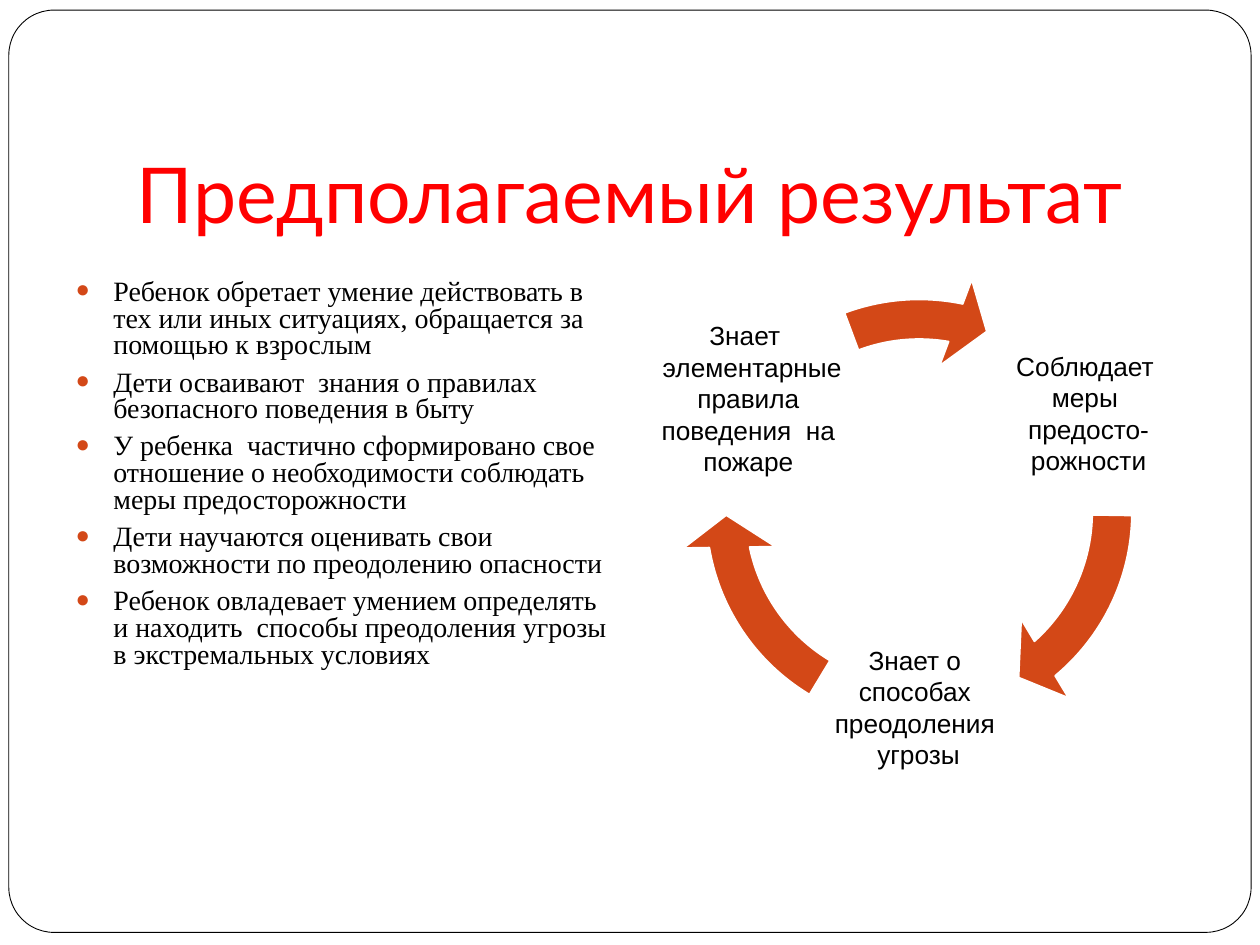
import pptx
import pptx.dml.color
import pptx.enum.shapes
import pptx.enum.text
import pptx.oxml
import pptx.oxml.ns
import pptx.util
from pptx.util import Inches

ALIGN = pptx.enum.text.PP_ALIGN
ANCHOR = pptx.enum.text.MSO_ANCHOR
SHAPE = pptx.enum.shapes.MSO_SHAPE


def color(hex_string):
    return pptx.dml.color.RGBColor.from_string(hex_string)


class SlideBuilder:
    accent = "D34817"
    black = "000000"
    white = "FFFFFF"
    red = "FF0000"

    def __init__(self, presentation):
        self.slide = presentation.slides.add_slide(presentation.slide_layouts[1])

    def place(self, shape, left, top, width, height):
        shape.left, shape.top = Inches(left), Inches(top)
        shape.width, shape.height = Inches(width), Inches(height)

    def format_runs(self, paragraph, font_name, size, font_color):
        for run in paragraph.runs:
            run.font.name = font_name
            run.font.size = pptx.util.Pt(size)
            run.font.color.rgb = color(font_color)

    def set_insets(self, frame, left, top, right, bottom):
        frame.margin_left, frame.margin_top = Inches(left), Inches(top)
        frame.margin_right, frame.margin_bottom = Inches(right), Inches(bottom)

    def shape(self, kind, box, adjustments, fill, line, line_width):
        shape = self.slide.shapes.add_shape(kind, *map(Inches, box))
        for index, value in enumerate(adjustments):
            shape.adjustments[index] = value
        shape.shadow.inherit = False
        shape.fill.solid()
        shape.fill.fore_color.rgb = color(fill)
        shape.line.color.rgb = color(line)
        shape.line.width = pptx.util.Pt(line_width)
        return shape

    def frame(self, box):
        shape = self.shape(SHAPE.ROUNDED_RECTANGLE, box, [0.049],
                           self.white, self.black, 0.5)
        # Send the frame behind the placeholders
        self.slide.shapes._spTree.insert(2, shape._element)

    def title(self, text, box):
        title = self.slide.shapes.title
        self.place(title, *box)
        frame = title.text_frame
        frame.text = text
        frame.auto_size = pptx.enum.text.MSO_AUTO_SIZE.NONE
        frame.vertical_anchor = ANCHOR.BOTTOM
        self.set_insets(frame, 0.1, 0.05, 0.1, 0.1)
        paragraph = frame.paragraphs[0]
        paragraph.alignment = ALIGN.CENTER
        self.format_runs(paragraph, "Lato", 44, self.red)

    def bullets(self, items, box):
        body = self.slide.placeholders[1]
        self.place(body, *box)
        frame = body.text_frame
        frame.text = "\n".join(items)
        frame.auto_size = pptx.enum.text.MSO_AUTO_SIZE.NONE
        for paragraph in frame.paragraphs:
            paragraph.line_spacing = 0.8
            paragraph.space_before = pptx.util.Pt(5.8)
            self.format_runs(paragraph, "Times New Roman", 16, self.black)
            self.bullet(paragraph)

    def bullet(self, paragraph):
        properties = paragraph._p.get_or_add_pPr()
        properties.set("marL", str(Inches(0.3)))
        properties.set("indent", str(-Inches(0.3)))
        namespace = pptx.oxml.ns.nsdecls("a")
        for xml in (
            f'<a:buClr {namespace}><a:srgbClr val="{self.accent}"/></a:buClr>',
            f'<a:buSzPct {namespace} val="85000"/>',
            f'<a:buChar {namespace} char="●"/>',
        ):
            properties.append(pptx.oxml.parse_xml(xml))

    def label(self, lines, left, top, bottom_inset):
        box = self.slide.shapes.add_textbox(
            Inches(left), Inches(top), Inches(1.6), Inches(1.6))
        frame = box.text_frame
        frame.word_wrap = True
        frame.vertical_anchor = ANCHOR.MIDDLE
        self.set_insets(frame, 0.02, 0.02, 0.02, bottom_inset)
        frame.text = "\n".join(lines)
        for paragraph in frame.paragraphs:
            paragraph.alignment = ALIGN.CENTER
            self.format_runs(paragraph, "Arial", 15, self.black)

    def cycle_arrow(self, start, end):
        # Angles are adjusted in units of 100000/60000 degrees
        adjustments = [0.083, 5.766, end * 0.6, start * 0.6, 0.096]
        self.shape(SHAPE.CIRCULAR_ARROW, (5.4, 2.17, 3.79, 3.79), adjustments,
                   self.accent, self.white, 1)


def main():
    presentation = pptx.Presentation()
    presentation.slide_width = Inches(10)
    presentation.slide_height = Inches(7.5)
    builder = SlideBuilder(presentation)

    # Frame, title and list
    builder.frame((0.07, 0.08, 9.86, 7.32))
    builder.title("Предполагаемый результат", (0.5, 0.5, 9, 1.5))
    builder.bullets([
        "Ребенок обретает умение действовать в тех или иных ситуациях, обращается за помощью к взрослым",
        "Дети осваивают  знания о правилах безопасного поведения в быту",
        "У ребенка  частично сформировано свое отношение о необходимости соблюдать меры предосторожности",
        "Дети научаются оценивать свои возможности по преодолению опасности",
        "Ребенок овладевает умением определять и находить  способы преодоления угрозы в экстремальных условиях",
    ], (0.5, 2.17, 4.42, 4.25))

    # Cycle: label lines, left, top, bottom inset, start and end of the arrow
    steps = [
        (["Соблюдает ", "меры ", "предосто-", "рожности"],
         7.84, 2.48, 0.02, 0.89, 49.36),
        (["Знает о ", "способах ", "преодоления ", "угрозы"],
         6.49, 4.81, 0.02, 121.03, 169.51),
        (["Знает ", " элементарные", " правила ", "поведения  на пожаре"],
         5.14, 2.48, 0.26, 249.48, 280.91),
    ]
    for lines, left, top, bottom_inset, start, end in steps:
        builder.label(lines, left, top, bottom_inset)
        builder.cycle_arrow(start, end)

    presentation.save("out.pptx")


if __name__ == "__main__":
    main()
